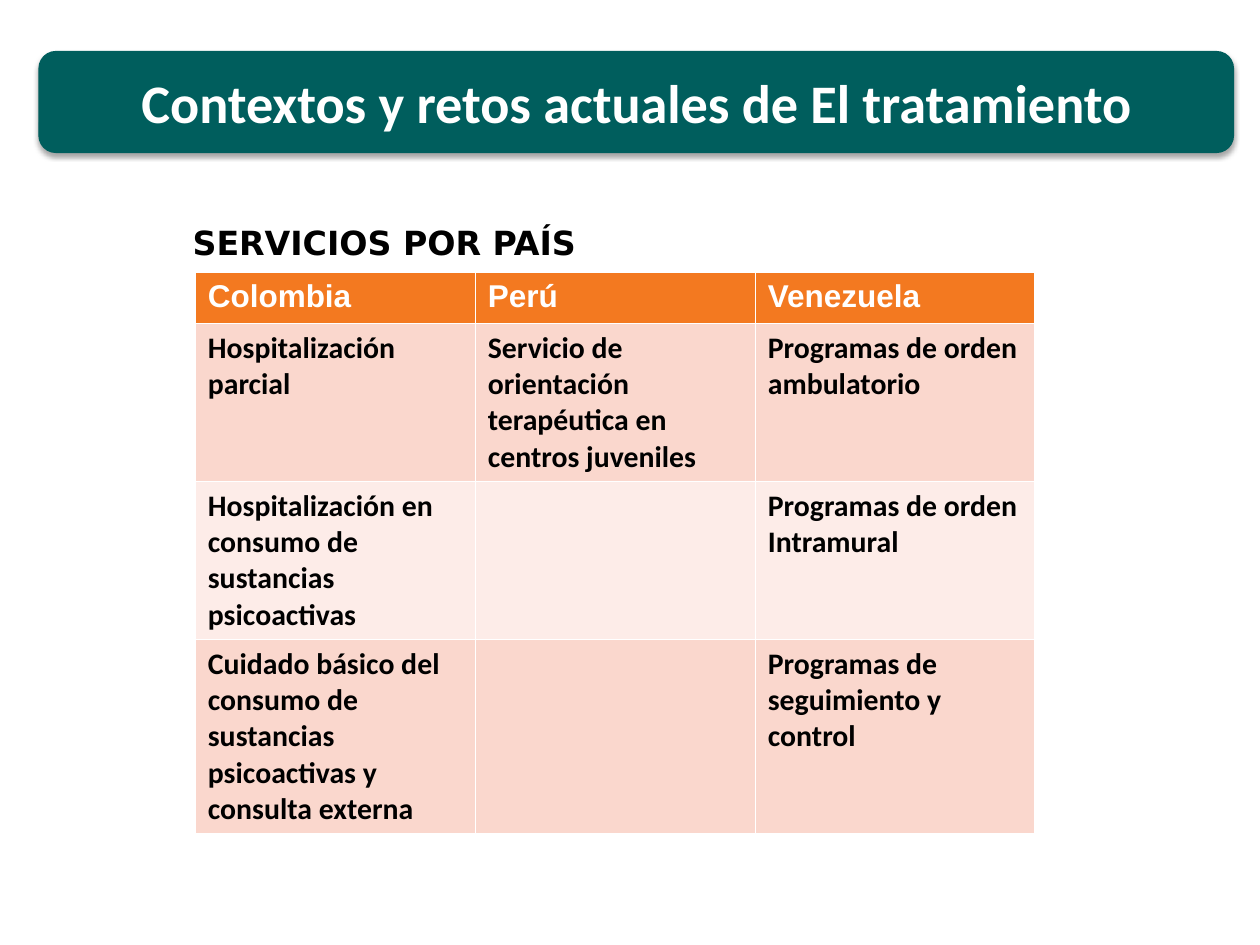
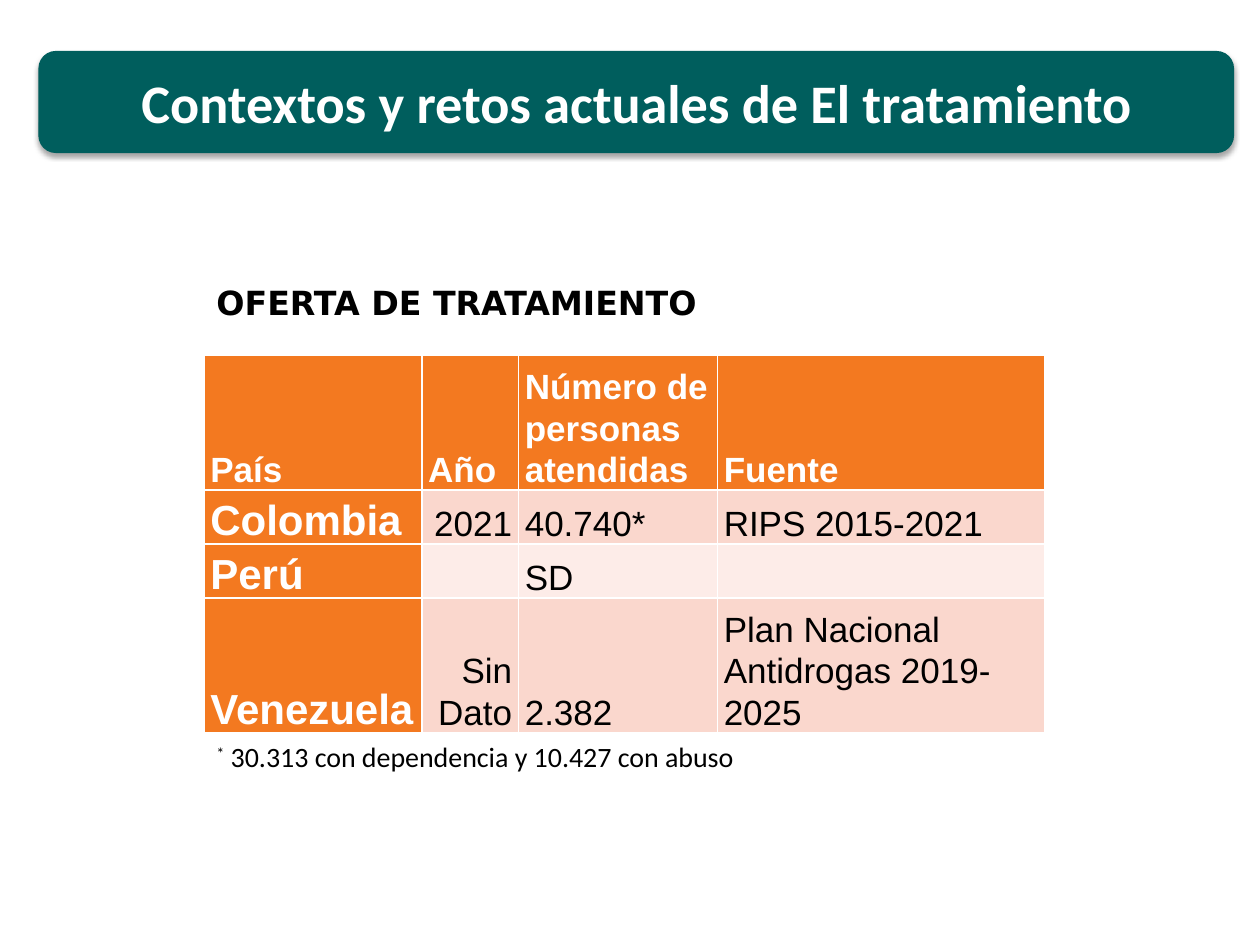
from lxml.etree import SubElement
from pptx import Presentation
from pptx.dml.color import RGBColor
from pptx.enum.shapes import MSO_SHAPE
from pptx.enum.text import MSO_ANCHOR as ANCHOR, MSO_AUTO_SIZE as AUTO, PP_ALIGN as AL
from pptx.oxml.ns import qn
from pptx.util import Pt

TEAL, ORANGE, WHITE, BLACK = "005E5D", "F37920", "FFFFFF", "000000"
BANDS = ("FAD7CD", "FDECE8")
TITLE = "Contextos y retos actuales de El tratamiento"
BAND_BOX = (22.3, 29.5, 682.5, 57.6)


def rgb(value):
    return RGBColor.from_string(value)


class Deck:
    """Shared style and the slide being filled."""

    def __init__(self):
        self.prs = Presentation()
        self.prs.slide_width, self.prs.slide_height = Pt(720), Pt(540)
        self.slide = None

    def font(self, p, name, size, color, bold=False):
        for r in p.runs:
            f = r.font
            f.name, f.size, f.bold = name, Pt(size), bold
            f.color.rgb = rgb(color)

    def new_slide(self):
        self.slide = self.prs.slides.add_slide(self.prs.slide_layouts[5])
        self.band()
        self.title()

    def band(self):
        box = [Pt(v) for v in BAND_BOX]
        sp = self.slide.shapes.add_shape(MSO_SHAPE.ROUNDED_RECTANGLE, *box)
        sp.fill.solid()
        sp.fill.fore_color.rgb = rgb(TEAL)
        sp.line.color.rgb = rgb(TEAL)
        sp.line.width = Pt(0.75)
        # Soft shadow straight below
        sp.shadow.inherit = False
        effects = sp._element.spPr.find(qn("a:effectLst"))
        shadow = SubElement(effects, qn("a:outerShdw"), blurRad=str(Pt(3.1)),
                            dist=str(Pt(1.8)), dir="5400000", rotWithShape="0")
        color = SubElement(shadow, qn("a:srgbClr"), val=BLACK)
        SubElement(color, qn("a:alpha"), val="35000")

    def title(self):
        sp = self.slide.shapes.title
        sp.left, sp.top, sp.width, sp.height = [Pt(v) for v in BAND_BOX]
        tf = sp.text_frame
        tf.text = TITLE
        tf.auto_size, tf.vertical_anchor = AUTO.NONE, ANCHOR.MIDDLE
        p = tf.paragraphs[0]
        p.alignment = AL.CENTER
        self.font(p, "Calibri", 31, WHITE, True)
        # Bring the title in front of the band
        self.slide.shapes._spTree.append(sp._element)

    def textbox(self, text, x, y, w, h):
        sp = self.slide.shapes.add_textbox(Pt(x), Pt(y), Pt(w), Pt(h))
        tf = sp.text_frame
        tf.text = text
        return tf

    def caption(self, text, x, y):
        tf = self.textbox(text, x, y, 574, 37.5)
        tf.word_wrap = True
        p = tf.paragraphs[0]
        p.alignment, p.line_spacing = AL.JUSTIFY, 1.5
        self.font(p, "DejaVu Sans", 19, BLACK, True)

    def footnote(self, mark, text, x, y):
        tf = self.textbox(mark, x, y, 321, 26.6)
        tf.word_wrap, tf.vertical_anchor = False, ANCHOR.MIDDLE
        p = tf.paragraphs[0]
        p.add_run().text = text
        self.font(p, "Calibri", 16, BLACK)
        p.runs[0]._r.get_or_add_rPr().set("baseline", "30000")

    def table(self, rows, x, y, widths, heights, style, first_col=False):
        """style(row, col) gives the font arguments of a cell."""
        table = self.slide.shapes.add_table(
            len(rows), len(widths), Pt(x), Pt(y),
            Pt(sum(widths)), Pt(sum(heights))).table
        table.first_col = first_col
        for col, w in zip(table.columns, widths):
            col.width = Pt(w)
        for i, (row, h) in enumerate(zip(rows, heights)):
            table.rows[i].height = Pt(h)
            for j, text in enumerate(row):
                cell = table.cell(i, j)
                head = i == 0 or (first_col and j == 0)
                cell.fill.solid()
                cell.fill.fore_color.rgb = rgb(ORANGE if head else BANDS[(i + 1) % 2])
                if text:
                    cell.text = text
                    self.font(cell.text_frame.paragraphs[0], *style(i, j))
        return table


def service_style(i, j):
    return ("Calibri", 17, BLACK, True) if i else ("Arial", 18, WHITE, True)


def offer_style(i, j):
    if i and j:
        return "Arial", 20, BLACK
    return "Arial", 24 if i else 20, WHITE, True


def services_slide(deck):
    deck.new_slide()
    deck.table([
        ("Colombia", "Perú", "Venezuela"),
        ("Hospitalización parcial",
         "Servicio de orientación terapéutica en centros juveniles",
         "Programas de orden ambulatorio"),
        ("Hospitalización en consumo de sustancias psicoactivas", "",
         "Programas de orden Intramural"),
        ("Cuidado básico del consumo de sustancias psicoactivas y consulta externa", "",
         "Programas de seguimiento y control"),
    ], 111.6, 155.6, [160] * 3, [29.2, 90, 90, 110.5], service_style)
    deck.caption("SERVICIOS POR PAÍS", 103, 112.3)


def offer_slide(deck):
    deck.new_slide()
    deck.caption("OFERTA DE TRATAMIENTO", 116.6, 146.2)
    table = deck.table([
        ("País", "Año", "Número de personas atendidas", "Fuente"),
        ("Colombia", "2021", "40.740*", "RIPS 2015-2021"),
        ("Perú", "", "SD", ""),
        ("Venezuela", "Sin Dato", "2.382", "Plan Nacional Antidrogas 2019-2025"),
    ], 116.6, 203, [124.5, 55.2, 113.7, 187], [77, 30.8, 30.8, 77],
        offer_style, first_col=True)
    # Tight cells, set on the bottom edge
    for cell in table.iter_cells():
        cell.margin_left = cell.margin_right = Pt(3.6)
        cell.margin_top = cell.margin_bottom = 0
        cell.vertical_anchor = ANCHOR.BOTTOM
        p = cell.text_frame.paragraphs[0]
        p.line_spacing, p.space_after = 1.07, Pt(8)
    for i in (1, 3):
        table.cell(i, 1).text_frame.paragraphs[0].alignment = AL.RIGHT
    deck.footnote("*", " 30.313 con dependencia y 10.427 con abuso", 116.6, 419)


def main():
    deck = Deck()
    services_slide(deck)
    offer_slide(deck)
    deck.prs.save("out.pptx")


if __name__ == "__main__":
    main()
